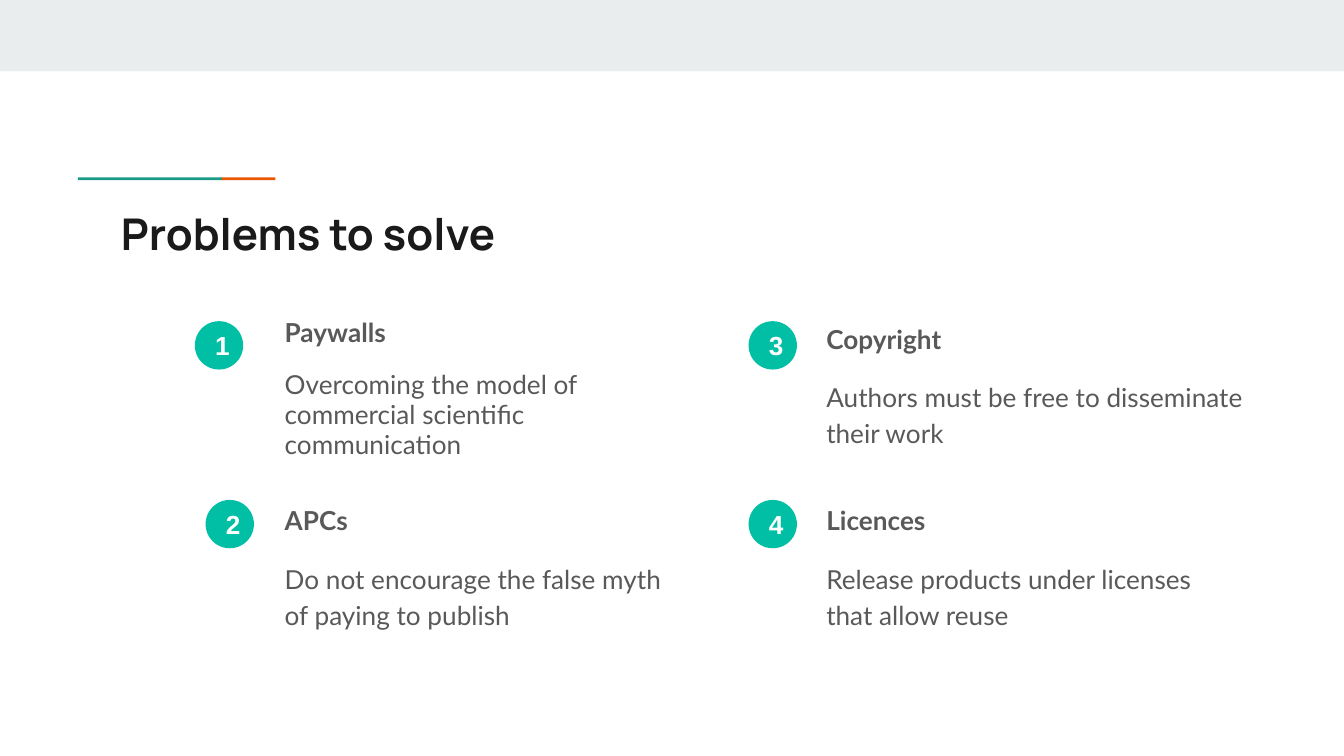
"""Build the "Problems to solve" slide with four numbered points."""
from dataclasses import dataclass

from pptx import Presentation
from pptx.dml.color import RGBColor
from pptx.enum.shapes import MSO_SHAPE
from pptx.enum.text import MSO_ANCHOR, MSO_AUTO_SIZE, PP_ALIGN
from pptx.shapes.autoshape import Shape
from pptx.slide import Slide
from pptx.text.text import TextFrame, _Paragraph
from pptx.util import Inches, Pt

RECT, OVAL = MSO_SHAPE.RECTANGLE, MSO_SHAPE.OVAL
TOP, MIDDLE = MSO_ANCHOR.TOP, MSO_ANCHOR.MIDDLE
LEFT, CENTER = PP_ALIGN.LEFT, PP_ALIGN.CENTER
FIXED = MSO_AUTO_SIZE.NONE

WHITE = RGBColor(0xFF, 0xFF, 0xFF)
MIST = RGBColor(0xE9, 0xED, 0xEE)
ORANGE = RGBColor(0xEB, 0x56, 0x00)
TEAL = RGBColor(0x1A, 0x99, 0x88)
MINT = RGBColor(0x00, 0xBF, 0xA5)
INK = RGBColor(0x1A, 0x1A, 0x1A)
GREY = RGBColor(0x59, 0x59, 0x59)

DOT = 0.36
ROWS = ((2.39, 2.27), (3.72, 3.62))


@dataclass
class Point:
    head: str
    body: str
    row: int
    dot: float
    left: float
    width: float = 3.1
    space: float = 1.15
    after: int = 0


POINTS = (
    Point("Paywalls", "Overcoming the model of commercial scientific communication",
          0, 1.45, 2.02, space=0.95),
    Point("APCs", "Do not encourage the false myth of paying to publish",
          1, 1.53, 2.02, after=12),
    Point("Copyright", "Authors must be free to disseminate their work",
          0, 5.57, 6.05, width=3.4),
    Point("Licences", "Release products under licenses that allow reuse",
          1, 5.57, 6.05),
)


def set_frame(frame: TextFrame, anchor: MSO_ANCHOR) -> None:
    """Set wrapping, anchor and equal insets."""
    frame.word_wrap = True
    frame.auto_size = FIXED
    frame.vertical_anchor = anchor
    frame.margin_left = frame.margin_right = Inches(0.1)
    frame.margin_top = frame.margin_bottom = Inches(0.1)


def style(para: _Paragraph, face: str, size: float, color: RGBColor,
          bold: bool = True, align: PP_ALIGN = LEFT) -> None:
    """Format a paragraph and its runs."""
    para.alignment = align
    for run in para.runs:
        font = run.font
        font.name, font.size, font.bold = face, Pt(size), bold
        font.color.rgb = color


def add_block(slide: Slide, kind: MSO_SHAPE, left: float, top: float,
              width: float, height: float, color: RGBColor) -> Shape:
    """Add a plain filled shape."""
    block = slide.shapes.add_shape(
        kind, Inches(left), Inches(top), Inches(width), Inches(height))
    block.shadow.inherit = False
    block.fill.solid()
    block.fill.fore_color.rgb = color
    block.line.fill.background()
    return block


def add_title(slide: Slide, text: str) -> None:
    """Place and format the title."""
    title = slide.shapes.title
    title.left, title.top = Inches(0.8), Inches(1.44)
    title.width, title.height = Inches(8.41), Inches(0.59)
    frame = title.text_frame
    frame.text = text
    set_frame(frame, TOP)
    style(frame.paragraphs[0], "Manrope", 23.4, INK)


def add_point(slide: Slide, num: int, point: Point) -> None:
    """Add a numbered dot and its text."""
    dot_top, text_top = ROWS[point.row]
    dot = add_block(slide, OVAL, point.dot, dot_top, DOT, DOT, MINT)
    dot.text_frame.text = str(num)
    set_frame(dot.text_frame, MIDDLE)
    style(dot.text_frame.paragraphs[0], "Arial", 14, WHITE, align=CENTER)

    box = slide.shapes.add_textbox(
        Inches(point.left), Inches(text_top), Inches(point.width), Inches(1.15))
    frame = box.text_frame
    frame.text = f"{point.head}\n{point.body}"
    set_frame(frame, TOP)
    head, body = frame.paragraphs
    style(head, "Lato", 14, GREY)
    style(body, "Lato", 14, GREY, bold=False)
    head.line_spacing = body.line_spacing = point.space
    body.space_before, body.space_after = Pt(12), Pt(point.after)


def main() -> None:
    """Build and save the slide."""
    deck = Presentation()
    deck.slide_width = Inches(10)
    deck.slide_height = Inches(10 * 9 / 16)
    slide = deck.slides.add_slide(deck.slide_layouts[5])
    add_block(slide, RECT, 0, 0, 10, 0.53, MIST)
    add_block(slide, RECT, 1.64, 1.32, 0.41, 0.02, ORANGE)
    add_block(slide, RECT, 0.58, 1.32, 1.07, 0.02, TEAL)
    add_title(slide, "Problems to solve")
    for num, point in enumerate(POINTS, 1):
        add_point(slide, num, point)
    deck.save("out.pptx")


if __name__ == "__main__":
    main()
